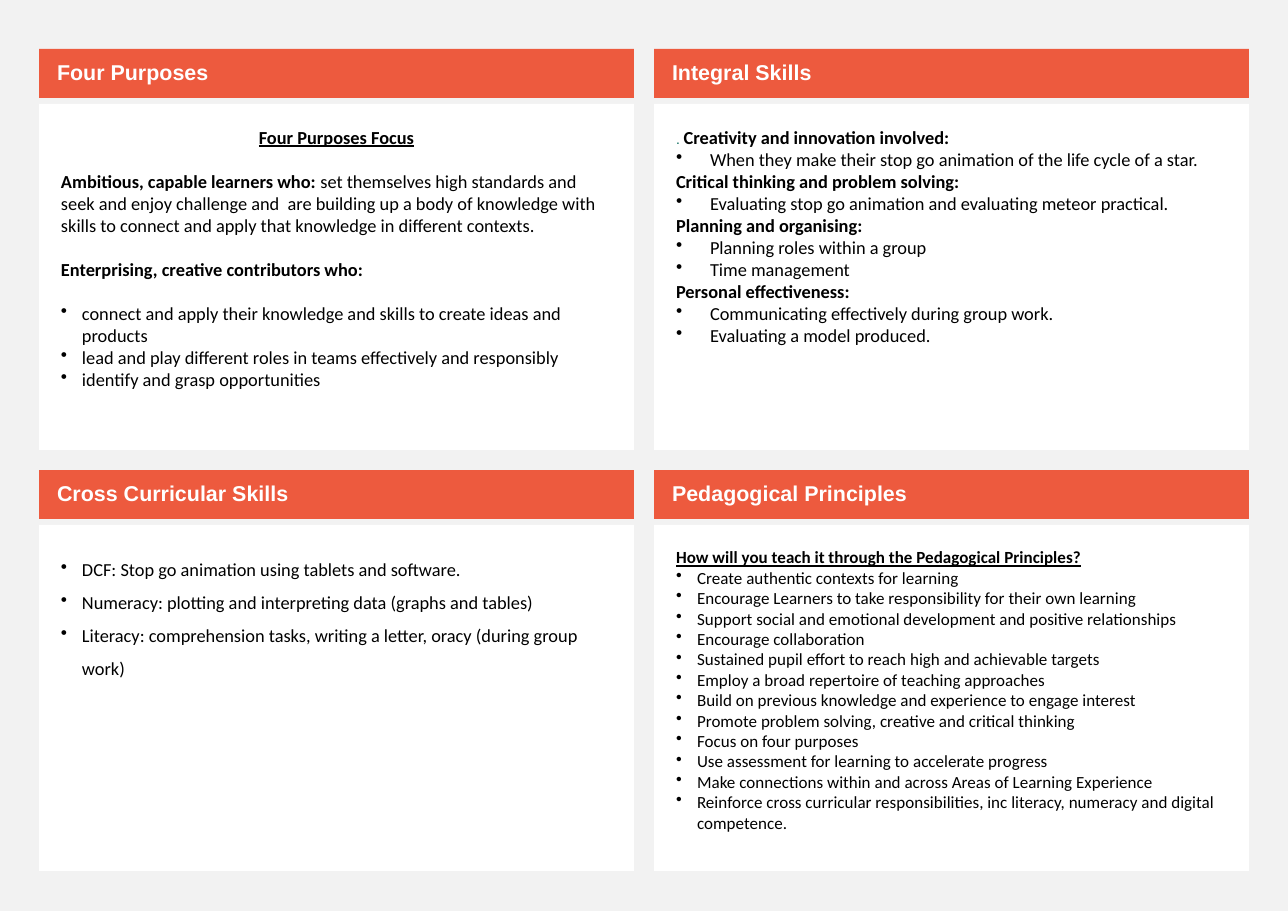
from dataclasses import dataclass

import pptx
import pptx.dml.color
import pptx.enum.shapes
import pptx.enum.text
import pptx.oxml.ns
import pptx.util
from lxml import etree

PX = 8298  # EMU in one px


@dataclass(frozen=True)
class Theme:
    page: str = "F2F2F2"
    header: str = "ED5A3E"
    card: str = "FFFFFF"
    header_text: str = "FFFFFF"
    text: str = "000000"
    mark: str = "006758"
    header_font: str = "Arial"
    font: str = "Calibri"
    header_size: float = 14
    size: float = 12
    dense_size: float = 11.1
    mark_size: float = 9
    blank_line: float = 14.4


@dataclass(frozen=True)
class Line:
    """A paragraph: an optional lead, then its main text."""
    text: str
    bold: bool = False
    underline: bool = False
    centred: bool = False
    bullet: bool = False
    gap: bool = False
    bold_lead: str = ""
    mark: str = ""


@dataclass(frozen=True)
class Panel:
    title: str
    lines: list
    size: float
    indent: int = 21
    line_spacing: float = 1.0


THEME = Theme()


def heading(text, **options):
    return Line(text, bold=True, **options)


def bullets(*texts, gap=False):
    return [Line(text, bullet=True, gap=gap and index == 0)
            for index, text in enumerate(texts)]


PANELS = [
    Panel("Four Purposes", [
        heading("Four Purposes Focus", underline=True, centred=True),
        Line("set themselves high standards and seek and enjoy challenge and  are building up "
             "a body of knowledge with skills to connect and apply that knowledge in "
             "different contexts.",
             bold_lead="Ambitious, capable learners who: ", gap=True),
        heading("Enterprising, creative contributors who:", gap=True),
        *bullets("connect and apply their knowledge and skills to create ideas and products",
                 "lead and play different roles in teams effectively and responsibly",
                 "identify and grasp opportunities", gap=True),
    ], THEME.size),
    Panel("Integral Skills", [
        heading("Creativity and innovation involved:", mark=". "),
        *bullets("When they make their stop go animation of the life cycle of a star."),
        heading("Critical thinking and problem solving:"),
        *bullets("Evaluating stop go animation and evaluating meteor practical."),
        heading("Planning and organising:"),
        *bullets("Planning roles within a group", "Time management"),
        heading("Personal effectiveness:"),
        *bullets("Communicating effectively during group work.",
                 "Evaluating a model produced."),
    ], THEME.size, indent=34),
    Panel("Cross Curricular Skills", bullets(
        "DCF: Stop go animation using tablets and software.",
        "Numeracy: plotting and interpreting data (graphs and tables)",
        "Literacy: comprehension tasks, writing a letter, oracy (during group work)",
    ), THEME.size, line_spacing=1.5),
    Panel("Pedagogical Principles", [
        heading("How will you teach it through the Pedagogical Principles?", underline=True),
        *bullets("Create authentic contexts for learning",
                 "Encourage Learners to take responsibility for their own learning",
                 "Support social and emotional development and positive relationships",
                 "Encourage collaboration",
                 "Sustained pupil effort to reach high and achievable targets",
                 "Employ a broad repertoire of teaching approaches",
                 "Build on previous knowledge and experience to engage interest",
                 "Promote problem solving, creative and critical thinking",
                 "Focus on four purposes",
                 "Use assessment for learning to accelerate progress",
                 "Make connections within and across Areas of Learning Experience",
                 "Reinforce cross curricular responsibilities, inc literacy, numeracy "
                 "and digital competence."),
    ], THEME.dense_size),
]


def colour(value):
    return pptx.dml.color.RGBColor.from_string(value)


def style_font(font, name, size, rgb, bold=None):
    font.name = name
    font.size = pptx.util.Pt(size)
    font.color.rgb = colour(rgb)
    font.bold = bold


def add_text_box(page, box, fill, insets, anchor):
    """Add a filled rectangle and return its text frame."""
    shape = page.shapes.add_shape(pptx.enum.shapes.MSO_SHAPE.RECTANGLE,
                                  *(length * PX for length in box))
    shape.shadow.inherit = False
    shape.fill.solid()
    shape.fill.fore_color.rgb = colour(fill)
    shape.line.fill.background()
    frame = shape.text_frame
    frame.word_wrap = True
    frame.vertical_anchor = anchor
    (frame.margin_left, frame.margin_top,
     frame.margin_right, frame.margin_bottom) = (inset * PX for inset in insets)
    return frame


def set_bullet(para, indent):
    properties = para._p.get_or_add_pPr()
    properties.set("marL", str(indent * PX))
    properties.set("indent", str(-indent * PX))
    mark = etree.Element(pptx.oxml.ns.qn("a:buChar"), char="•")
    properties.insert_element_before(mark, "a:tabLst", "a:defRPr", "a:extLst")


def add_span(para, text):
    span = para.add_run()
    span.text = text
    return span


def write_line(para, line, panel):
    align = pptx.enum.text.PP_ALIGN
    para.alignment = align.CENTER if line.centred else align.LEFT
    para.line_spacing = panel.line_spacing
    if line.gap:
        para.space_before = pptx.util.Pt(THEME.blank_line)
    style_font(para.font, THEME.font, panel.size, THEME.text, line.bold)
    para.font.underline = line.underline
    if line.bullet:
        set_bullet(para, panel.indent)
    if line.mark:
        span = add_span(para, line.mark)
        style_font(span.font, THEME.header_font, THEME.mark_size, THEME.mark, False)
    if line.bold_lead:
        add_span(para, line.bold_lead).font.bold = True
    add_span(para, line.text)


def add_header(page, box, title):
    frame = add_text_box(page, box, THEME.header, (18, 6, 11, 6),
                         pptx.enum.text.MSO_ANCHOR.MIDDLE)
    para = frame.paragraphs[0]
    para.alignment = pptx.enum.text.PP_ALIGN.LEFT
    para.line_spacing = 0.9
    style_font(para.font, THEME.header_font, THEME.header_size, THEME.header_text, True)
    add_span(para, title)


def add_card(page, box, panel):
    frame = add_text_box(page, box, THEME.card, (22, 22, 22, 22),
                         pptx.enum.text.MSO_ANCHOR.TOP)
    for index, line in enumerate(panel.lines):
        para = frame.add_paragraph() if index else frame.paragraphs[0]
        write_line(para, line, panel)


def add_panel(page, box, panel):
    left, top, width, height = box
    header_height, gap = 49, 6
    offset = header_height + gap
    add_header(page, (left, top, width, header_height), panel.title)
    add_card(page, (left, top + offset, width, height - offset), panel)


def main():
    deck = pptx.Presentation()
    deck.slide_width, deck.slide_height = 1288 * PX, 911 * PX
    page = deck.slides.add_slide(deck.slide_layouts[6])
    page.background.fill.solid()
    page.background.fill.fore_color.rgb = colour(THEME.page)
    width, height, gutter = 595, 401, 20
    for index, panel in enumerate(PANELS):
        row, column = divmod(index, 2)
        box = (39 + column * (width + gutter), 49 + row * (height + gutter), width, height)
        add_panel(page, box, panel)
    deck.save("out.pptx")


if __name__ == "__main__":
    main()
